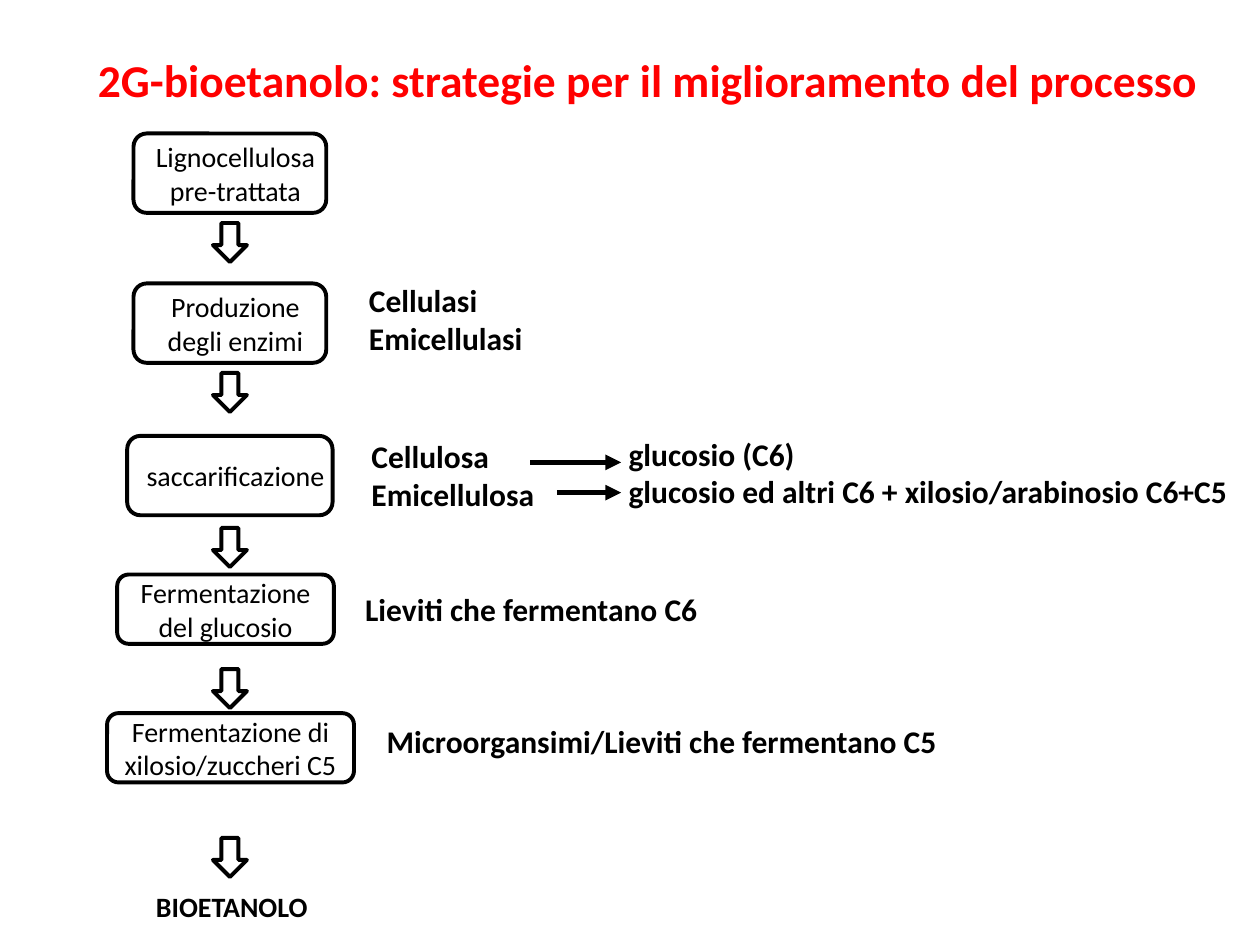
from lxml import etree
from pptx import Presentation
from pptx import util as u
from pptx.dml.color import RGBColor
from pptx.enum import shapes, text
from pptx.oxml.ns import qn

PX = 9144
FONT = "Calibri"
COLORS = {"title": "FF0000", "ink": "000000", "paper": "FFFFFF"}

STEPS = [
    ((106, 106, 153, 63), "Lignocellulosa\npre-trattata"),
    ((106, 225, 153, 63), "Produzione degli enzimi"),
    ((101, 346, 163, 63), "saccarificazione"),
    ((93, 456, 172, 55), "Fermentazione del glucosio"),
    ((85, 566, 196, 55), "Fermentazione di\nxilosio/zuccheri C5"),
]
ARROW_TOPS = [177, 296, 419, 531, 665]
NOTES = [
    ((283, 218, 157, 71), "Cellulasi\nEmicellulasi"),
    ((285, 342, 157, 71), "Cellulosa\nEmicellulosa"),
    ((489, 340, 559, 71),
     "glucosio (C6)\nglucosio ed altri C6 + xilosio/arabinosio C6+C5"),
    ((280, 463, 342, 40), "Lieviti che fermentano C6"),
    ((297, 568, 633, 40), "Microorgansimi/Lieviti che fermentano C5"),
]
LINKS = [(421, 367), (442, 391)]
LINK_END = 493


def emu(*lengths):
    return [length * PX for length in lengths]


def color(name):
    return RGBColor.from_string(COLORS[name])


def write(shape, words, size, align, bold=False, ink="ink"):
    frame = shape.text_frame
    frame.word_wrap = True
    frame.text = words
    for para in frame.paragraphs:
        para.alignment = align
        for span in para.runs:
            span.font.name = FONT
            span.font.size = u.Pt(size)
            span.font.bold = bold
            span.font.color.rgb = color(ink)
    return frame


def outline(line, width):
    line.color.rgb = color("ink")
    line.width = u.Pt(width)


def add_title(page, box, words):
    title = page.shapes.title
    title.left, title.top, title.width, title.height = emu(*box)
    frame = write(title, words, 26, text.PP_ALIGN.CENTER, True, "title")
    frame.vertical_anchor = text.MSO_ANCHOR.TOP
    frame.auto_size = text.MSO_AUTO_SIZE.NONE


def add_step(page, box, words, framed=True, left_inset=10):
    step = page.shapes.add_shape(
        shapes.MSO_SHAPE.ROUNDED_RECTANGLE, *emu(*box))
    step.shadow.inherit = False
    step.fill.background()
    if framed:
        outline(step.line, 2.25)
    else:
        step.line.fill.background()
    frame = write(step, words, 16, text.PP_ALIGN.CENTER, not framed)
    frame.vertical_anchor = text.MSO_ANCHOR.MIDDLE
    frame.margin_left = left_inset * PX
    frame.margin_right = frame.margin_top = frame.margin_bottom = PX


def add_down_arrow(page, box):
    arrow = page.shapes.add_shape(shapes.MSO_SHAPE.DOWN_ARROW, *emu(*box))
    arrow.shadow.inherit = False
    arrow.fill.solid()
    arrow.fill.fore_color.rgb = color("paper")
    outline(arrow.line, 2.25)


def add_note(page, box, words):
    note = page.shapes.add_textbox(*emu(*box))
    write(note, words, 18, text.PP_ALIGN.JUSTIFY, True)


def add_link(page, left, right, top):
    link = page.shapes.add_connector(
        shapes.MSO_CONNECTOR.STRAIGHT, *emu(left, top, right, top))
    outline(link.line, 3)
    properties = link._element.spPr
    etree.SubElement(properties.find(qn("a:ln")), qn("a:tailEnd"),
                     type="triangle")
    etree.SubElement(properties, qn("a:effectLst"))


def main():
    deck = Presentation()
    deck.slide_width, deck.slide_height = emu(1000, 750)
    page = deck.slides.add_slide(deck.slide_layouts[5])
    add_title(page, (39, 36, 951, 54),
              "2G-bioetanolo: strategie per il miglioramento del processo")
    for index, (box, words) in enumerate(STEPS):
        add_step(page, box, words, left_inset=10 if index < 3 else 1)
    add_step(page, (97, 696, 174, 47), "BIOETANOLO", framed=False,
             left_inset=1)
    for top in ARROW_TOPS:
        add_down_arrow(page, (169, top, 27, 31))
    for box, words in NOTES:
        add_note(page, box, words)
    for left, top in LINKS:
        add_link(page, left, LINK_END, top)
    deck.save("out.pptx")


if __name__ == "__main__":
    main()
